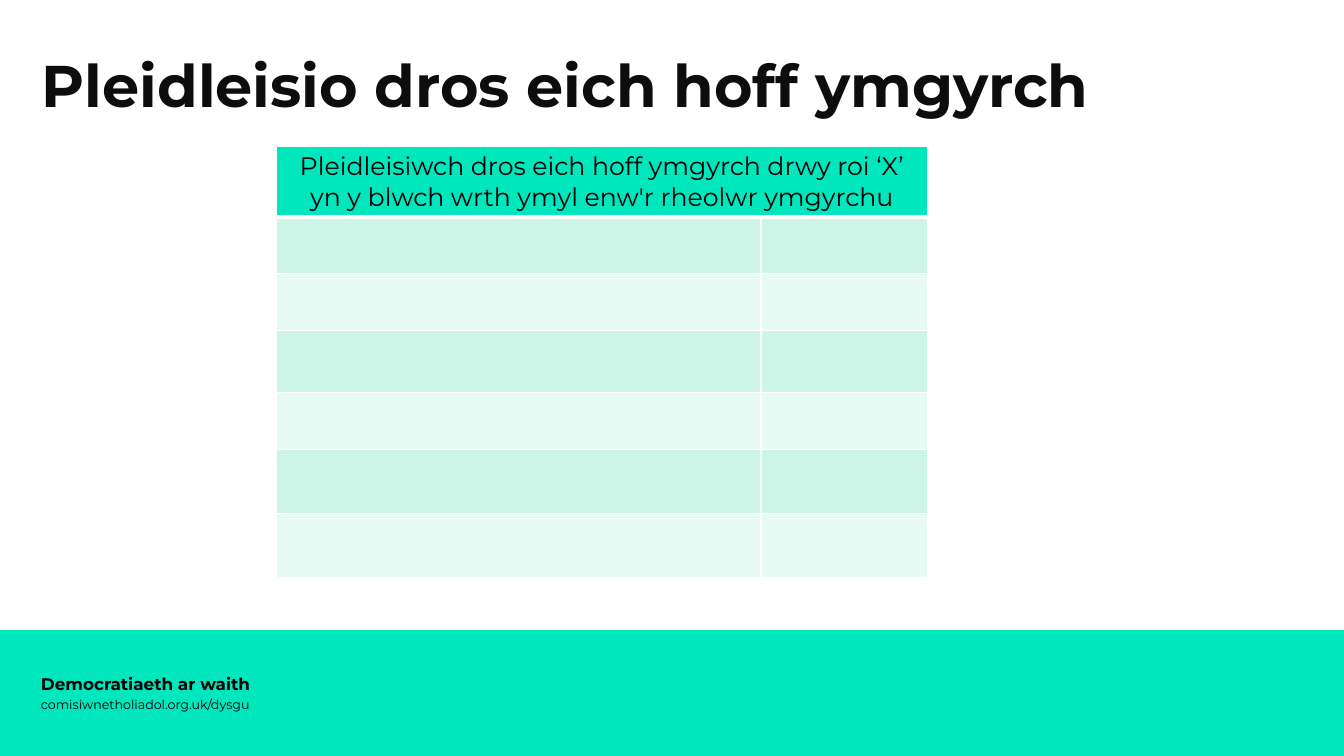
from lxml import etree
from pptx import Presentation
from pptx.dml.color import RGBColor
from pptx.enum.shapes import MSO_SHAPE
from pptx.enum.text import MSO_ANCHOR, PP_ALIGN
from pptx.oxml.ns import qn
from pptx.util import Inches, Pt

RECTANGLE = MSO_SHAPE.RECTANGLE
TOP, MIDDLE = MSO_ANCHOR.TOP, MSO_ANCHOR.MIDDLE
LEFT, CENTER = PP_ALIGN.LEFT, PP_ALIGN.CENTER

SLIDE_WIDTH, SLIDE_HEIGHT = Inches(13.33), Inches(7.5)
GRID_COLUMNS, GRID_ROWS = 16, 12


def color(hex_value):
    return RGBColor.from_string(hex_value)


class SlideBuilder:
    """Places styled elements on a grid of 16 columns and 12 rows."""

    font = "Montserrat"
    black = "000000"
    white = "FFFFFF"

    def __init__(self, slide):
        self.slide = slide

    def across(self, columns):
        return int(SLIDE_WIDTH * columns / GRID_COLUMNS)

    def down(self, rows):
        return int(SLIDE_HEIGHT * rows / GRID_ROWS)

    def area(self, left, top, width, height):
        return self.across(left), self.down(top), self.across(width), self.down(height)

    def fill_text(self, frame, text, size, bold=False, ink=black, align=LEFT):
        para = frame.paragraphs[0]
        para.text = text
        para.alignment = align
        for span in para.runs:
            span.font.name = self.font
            span.font.size = Pt(size)
            span.font.bold = bold
            span.font.color.rgb = color(ink)
        return para

    def band(self, left, top, width, height, fill):
        band = self.slide.shapes.add_shape(RECTANGLE, *self.area(left, top, width, height))
        band.shadow.inherit = False
        band.fill.solid()
        band.fill.fore_color.rgb = color(fill)
        band.line.fill.background()

    def text(self, left, top, width, height, text, size, anchor=MIDDLE, **style):
        box = self.slide.shapes.add_textbox(*self.area(left, top, width, height))
        frame = box.text_frame
        frame.word_wrap = True
        frame.vertical_anchor = anchor
        return self.fill_text(frame, text, size, **style)

    def cell_style(self, cell, fill, **widths):
        """Sets border widths in points by side (L, R, T, B), then the fill."""
        properties = cell._tc.get_or_add_tcPr()
        for side in "LRTB":
            line = etree.SubElement(properties, qn(f"a:ln{side}"))
            line.set("w", str(Pt(widths.get(side, 1))))
            paint = etree.SubElement(line, qn("a:solidFill"))
            etree.SubElement(paint, qn("a:srgbClr")).set("val", self.white)
        cell.fill.solid()
        cell.fill.fore_color.rgb = color(fill)

    def ballot(self, left, top, widths, heights, heading, head_fill, band_fills):
        frame = self.slide.shapes.add_table(
            len(heights), len(widths), *self.area(left, top, sum(widths), sum(heights)))
        table = frame.table
        table.first_row = table.horz_banding = False
        for column, width in zip(table.columns, widths):
            column.width = self.across(width)
        for index, (row, height) in enumerate(zip(table.rows, heights)):
            row.height = self.down(height)
            for cell in row.cells:
                if index == 0:
                    self.cell_style(cell, head_fill, B=3)
                else:
                    fill = band_fills[(index - 1) % len(band_fills)]
                    self.cell_style(cell, fill, T=3 if index == 1 else 1)
        head = table.cell(0, 0)
        head.merge(table.cell(0, len(widths) - 1))
        self.fill_text(head.text_frame, heading, 18, align=CENTER)


def main():
    deck = Presentation()
    deck.slide_width, deck.slide_height = SLIDE_WIDTH, SLIDE_HEIGHT
    page = SlideBuilder(deck.slides.add_slide(deck.slide_layouts[6]))

    # Footer
    page.band(0, 10, GRID_COLUMNS, 2, "00E7BD")
    page.text(0.37, 10.86, 9.18, 0.64, "comisiwnetholiadol.org.uk/dysgu", 9)
    page.text(0.37, 10.54, 9.18, 0.64, "Democratiaeth ar waith", 12, bold=True)

    # Ballot paper
    page.ballot(
        3.29, 2.32, [5.77, 1.98], [1.12, 0.9, 0.9, 0.99, 0.9, 1.02, 1.02],
        "Pleidleisiwch dros eich hoff ymgyrch drwy roi ‘X’ yn y blwch "
        "wrth ymyl enw'r rheolwr ymgyrchu",
        "00E6BD", ["CCF5E8", "E7FAF4"])

    # Title
    title = page.text(0.38, 0.82, 13.12, 1.92, "Pleidleisio dros eich hoff ymgyrch",
                      42, anchor=TOP, bold=True, ink="0D0D0D")
    title.line_spacing = 0.9

    deck.save("out.pptx")


if __name__ == "__main__":
    main()
